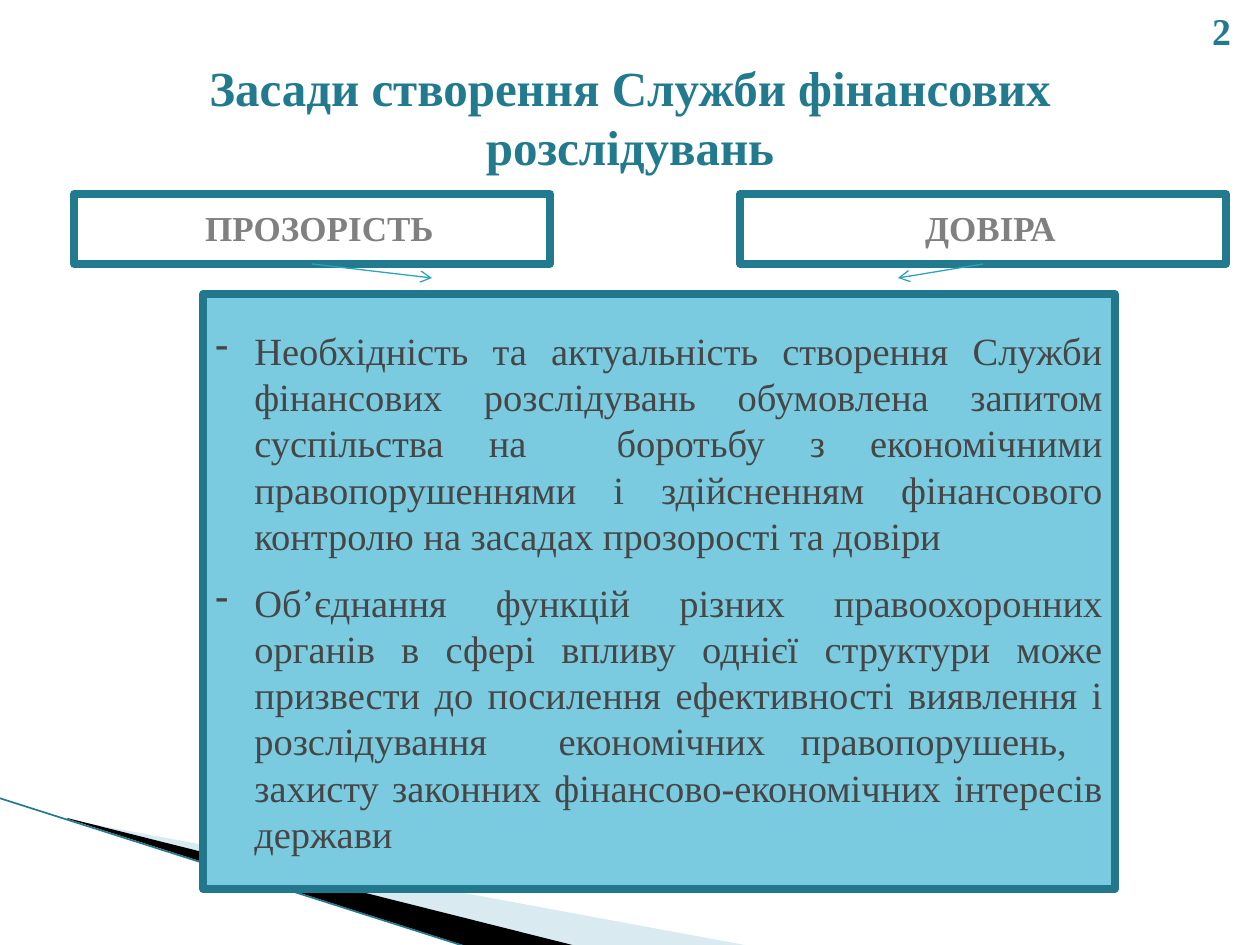
from lxml.etree import SubElement
from pptx import Presentation
from pptx.dml.color import RGBColor
from pptx.enum.shapes import MSO_CONNECTOR, MSO_SHAPE
from pptx.enum.text import MSO_ANCHOR, PP_ALIGN
from pptx.oxml.ns import qn
from pptx.util import Emu, Pt

SCALE = 914400 / 126
FONT = "Times New Roman"
TEAL = RGBColor(0x22, 0x7A, 0x8F)
PANEL_LINE = RGBColor(0x21, 0x78, 0x8D)
PANEL_FILL = RGBColor(0x7A, 0xCB, 0xE0)
ARROW = RGBColor(0x2D, 0xA2, 0xBF)
PALE = RGBColor(0xA0, 0xCB, 0xDC)
WHITE = RGBColor(0xFF, 0xFF, 0xFF)
BLACK = RGBColor(0, 0, 0)
GRAY = RGBColor(0x80, 0x80, 0x80)
DARK = RGBColor(0x46, 0x46, 0x46)

POINTS = [
    "Необхідність та актуальність створення Служби фінансових розслідувань "
    "обумовлена запитом суспільства на  боротьбу з економічними "
    "правопорушеннями і здійсненням фінансового контролю на засадах "
    "прозорості та довіри",
    "Об’єднання функцій різних правоохоронних органів в сфері впливу однієї "
    "структури може призвести до посилення ефективності виявлення і "
    "розслідування  економічних правопорушень,  захисту законних "
    "фінансово-економічних інтересів держави",
]


def px(n):
    return Emu(round(n * SCALE))


def set_font(p, size, color, bold=False):
    p.font.name = FONT
    p.font.size = Pt(size)
    p.font.bold = bold
    p.font.color.rgb = color


def set_indent(p, left, first=0):
    pPr = p._p.get_or_add_pPr()
    pPr.set("marL", str(px(left)))
    pPr.set("indent", str(px(first)))
    return pPr


def add_wedge(s, points, color, alpha=None):
    builder = s.shapes.build_freeform(*points[0], scale=SCALE)
    builder.add_line_segments(points[1:], close=True)
    sp = builder.convert_to_shape()
    sp.shadow.inherit = False
    sp.fill.solid()
    sp.fill.fore_color.rgb = color
    sp.line.fill.background()
    if alpha:
        clr = sp._element.spPr.find(qn("a:solidFill"))[0]
        SubElement(clr, qn("a:alpha"), val=str(alpha * 1000))


def add_line(s, start, end, color, width, arrow=False):
    line = s.shapes.add_connector(
        MSO_CONNECTOR.STRAIGHT, *map(px, start), *map(px, end))
    line.line.color.rgb = color
    line.line.width = Pt(width)
    if arrow:
        SubElement(line.line._get_or_add_ln(), qn("a:tailEnd"), type="arrow")
    SubElement(line._element.spPr, qn("a:effectLst"))
    return line


def add_box(s, x, y, w, h, fill, line):
    sp = s.shapes.add_shape(MSO_SHAPE.RECTANGLE, *map(px, (x, y, w, h)))
    sp.shadow.inherit = False
    sp.fill.solid()
    sp.fill.fore_color.rgb = fill
    sp.line.color.rgb = line
    sp.line.width = Pt(4.33)
    sp.text_frame.word_wrap = True
    return sp


def add_heading(s, x, w, text):
    sp = add_box(s, x, 194, w, 70, WHITE, TEAL)
    tf = sp.text_frame
    tf.vertical_anchor = MSO_ANCHOR.TOP
    tf.margin_top = px(12)
    p = tf.paragraphs[0]
    p.text = text
    p.alignment = PP_ALIGN.CENTER
    set_indent(p, 15)
    set_font(p, 20, GRAY, True)
    return sp


def add_panel(s):
    tf = add_box(s, 203, 294, 912, 595, PANEL_FILL, PANEL_LINE).text_frame
    tf.vertical_anchor = MSO_ANCHOR.MIDDLE
    for i, text in enumerate(POINTS):
        p = tf.add_paragraph() if i else tf.paragraphs[0]
        p.text = text
        p.alignment = PP_ALIGN.JUSTIFY
        p.space_after = Pt(12)
        SubElement(set_indent(p, 39, -39), qn("a:buChar"), char="-")
        set_font(p, 22, DARK)


def add_label(s, x, y, w, h, text, size):
    tf = s.shapes.add_textbox(*map(px, (x, y, w, h))).text_frame
    tf.word_wrap = True
    tf.vertical_anchor = MSO_ANCHOR.MIDDLE
    p = tf.paragraphs[0]
    p.text = text
    p.alignment = PP_ALIGN.CENTER
    set_font(p, size, TEAL, True)


def main():
    prs = Presentation()
    prs.slide_width, prs.slide_height = px(1260), px(945)
    s = prs.slides.add_slide(prs.slide_layouts[6])
    add_wedge(s, [(69, 820), (750, 946), (575, 946), (69, 819)], PALE, 40)
    add_wedge(s, [(67, 818), (576, 946), (469, 947), (68, 819)], BLACK)
    add_line(s, (-1, 798), (467, 947), TEAL, 0.95)
    add_label(s, 63, 38, 1134, 157, "Засади створення Служби фінансових розслідувань", 28)
    for x, w, text, tip in [(74, 476, "ПРОЗОРІСТЬ", 432), (740, 486, "ДОВІРА", 898)]:
        heading = add_heading(s, x, w, text)
        arrow = add_line(s, (x + w // 2, 264), (tip, 278), ARROW, 0.75, True)
        arrow.begin_connect(heading, 2)
    add_panel(s)
    add_label(s, 1192, 3, 59, 54, "2", 21.6)
    prs.save("out.pptx")


if __name__ == "__main__":
    main()
